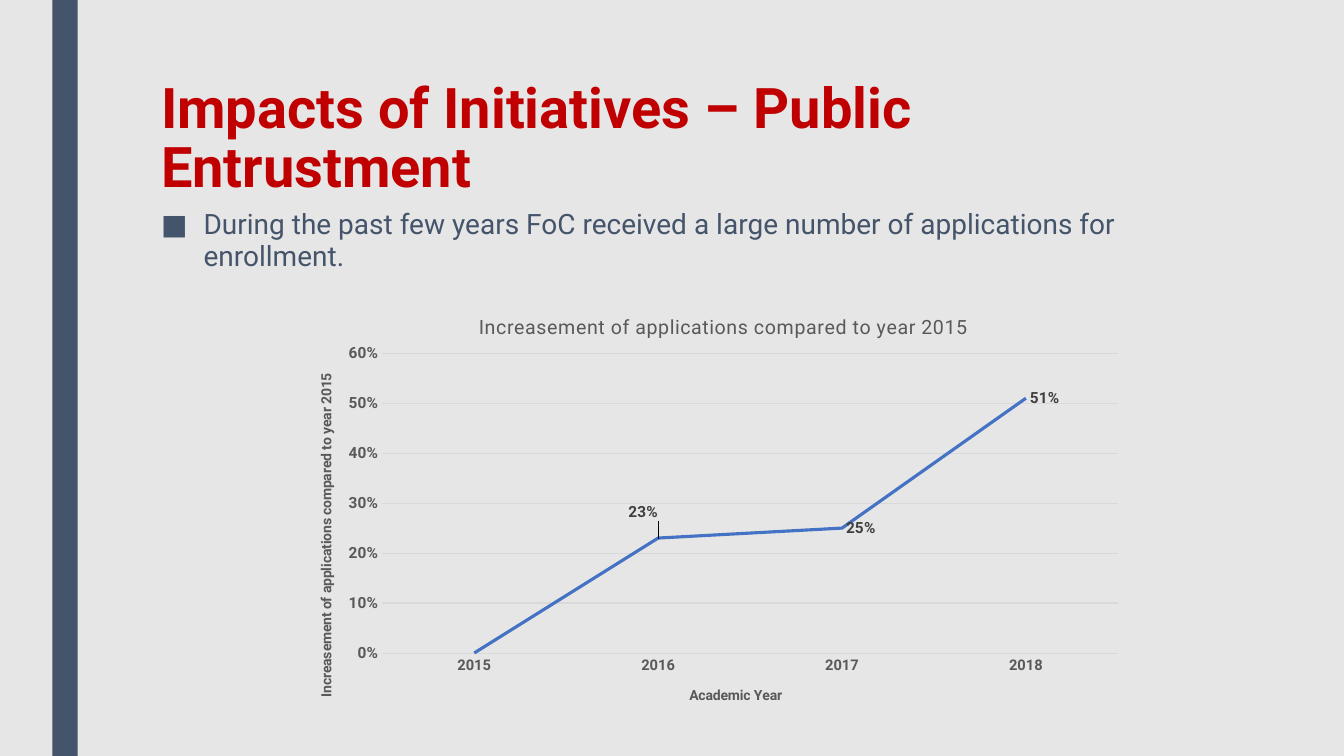
from dataclasses import dataclass

from lxml import etree
from pptx import Presentation
from pptx.chart.data import CategoryChartData
from pptx.dml.color import RGBColor
from pptx.enum.chart import XL_CHART_TYPE, XL_LABEL_POSITION, XL_TICK_MARK
from pptx.enum.shapes import MSO_SHAPE
from pptx.oxml import parse_xml
from pptx.oxml.ns import nsdecls, qn
from pptx.util import Cm, Pt

LINE = XL_CHART_TYPE.LINE
LABEL_RIGHT = XL_LABEL_POSITION.RIGHT
NO_TICK = XL_TICK_MARK.NONE
RECT = MSO_SHAPE.RECTANGLE


@dataclass(frozen=True)
class Theme:
    font: str = "Roboto"
    background: str = "E7E6E6"
    slate: str = "44546A"
    red: str = "C00000"
    blue: str = "4472C4"
    grey: str = "595959"
    label: str = "404040"
    grid: str = "D9D9D9"
    title_size: float = 40
    body_size: float = 20
    chart_title_size: float = 14
    axis_size: float = 11
    category_size: float = 10.5
    axis_title_size: float = 10


@dataclass(frozen=True)
class TextBlock:
    text: str
    top: float
    height: float
    size: float
    color: str
    line_spacing: float
    bold: bool = False
    bullet: str = ""


@dataclass(frozen=True)
class ChartTitle:
    text: str
    size: float
    x: float
    y: float
    bold: bool = True
    spacing: int = 0


THEME = Theme()
GROWTH = "Increasement of applications compared to year 2015"

BLOCKS = [
    TextBlock("Impacts of Initiatives – Public Entrustment", 1.9, 4.11,
              THEME.title_size, THEME.red, 0.89, bold=True),
    TextBlock("During the past few years FoC received a large number of "
              "applications for enrollment.", 5.16, 2.2,
              THEME.body_size, THEME.slate, 0.94, bullet="■"),
]

APPLICATIONS = {"2015": 0, "2016": 0.23, "2017": 0.25, "2018": 0.51}
LABEL_SHIFTS = {1: (-0.04, -0.06), 2: (0, 0), 3: (0, 0)}

CHART_TITLE = ChartTitle(GROWTH, THEME.chart_title_size, 0.22, 0.05,
                         bold=False, spacing=30)
CATEGORY_TITLE = ChartTitle("Academic Year", THEME.axis_title_size, 0.47, 0.91)
VALUE_TITLE = ChartTitle(GROWTH, THEME.axis_title_size, 0.03, 0.19)


def style_font(font, size: float, color: str, bold: bool = False) -> None:
    font.name = THEME.font
    font.size = Pt(size)
    font.bold = bold
    font.color.rgb = RGBColor.from_string(color)


def add_bullet(p, char: str) -> None:
    """Give the paragraph a hanging indent and a bullet character."""
    pPr = p._p.get_or_add_pPr()
    hang = Cm(1.07)
    pPr.set("marL", str(hang))
    pPr.set("indent", str(-hang))
    etree.SubElement(pPr, qn("a:buFont")).set("typeface", THEME.font)
    etree.SubElement(pPr, qn("a:buChar")).set("char", char)


def add_text(s, block: TextBlock) -> None:
    box = s.shapes.add_textbox(Cm(3.81), Cm(block.top), Cm(26.67), Cm(block.height))
    tf = box.text_frame
    tf.word_wrap = True
    p = tf.paragraphs[0]
    p.line_spacing = block.line_spacing
    if block.bullet:
        p.space_before, p.space_after = Pt(10), Pt(2)
        add_bullet(p, block.bullet)
    r = p.add_run()
    r.text = block.text
    style_font(r.font, block.size, block.color, block.bold)


def manual_layout(x: float, y: float, size: tuple[float, float] | None = None,
                  edge: bool = True):
    """Return a c:layout in fractions of the chart; edge False means an offset."""
    tags = []
    if size:
        tags.append('<c:layoutTarget val="inner"/>')
    if edge:
        tags.append('<c:xMode val="edge"/><c:yMode val="edge"/>')
    tags.append(f'<c:x val="{x}"/><c:y val="{y}"/>')
    if size:
        tags.append(f'<c:w val="{size[0]}"/><c:h val="{size[1]}"/>')
    return parse_xml(f'<c:layout {nsdecls("c")}><c:manualLayout>'
                     f'{"".join(tags)}</c:manualLayout></c:layout>')


def set_title(owner, title: ChartTitle) -> None:
    """Title a chart or an axis at a fixed place."""
    heading = owner.chart_title if hasattr(owner, "chart_title") else owner.axis_title
    r = heading.text_frame.paragraphs[0].add_run()
    r.text = title.text
    style_font(r.font, title.size, THEME.grey, title.bold)
    if title.spacing:
        r.font._element.set("spc", str(title.spacing))
    element = heading._element
    for old in element.findall(qn("c:layout")):
        element.remove(old)
    element.find(qn("c:tx")).addnext(manual_layout(title.x, title.y))


def style_axes(chart) -> None:
    categories, values = chart.category_axis, chart.value_axis
    for axis, size in ((categories, THEME.category_size), (values, THEME.axis_size)):
        axis.major_tick_mark = axis.minor_tick_mark = NO_TICK
        style_font(axis.tick_labels.font, size, THEME.grey, bold=True)
    values.minimum_scale, values.maximum_scale, values.major_unit = 0, 0.6, 0.1
    values.tick_labels.number_format = "0%"
    values.tick_labels.number_format_is_linked = False
    values.format.line.fill.background()
    for line in (categories.format.line, values.major_gridlines.format.line):
        line.color.rgb = RGBColor.from_string(THEME.grid)
        line.width = Pt(0.75)


def style_series(series) -> None:
    series.smooth = False
    series.format.line.color.rgb = RGBColor.from_string(THEME.blue)
    series.format.line.width = Pt(2.25)
    for index, (dx, dy) in LABEL_SHIFTS.items():
        label = series.points[index].data_label
        style_font(label.font, THEME.axis_size, THEME.label, bold=True)
        label.position = LABEL_RIGHT
        if dx or dy:
            idx = label._dLbl.find(qn("c:idx"))
            idx.addnext(manual_layout(dx, dy, edge=False))


def add_growth_chart(s) -> None:
    data = CategoryChartData(number_format="0%")
    data.categories = list(APPLICATIONS)
    data.add_series("Series 1", list(APPLICATIONS.values()))
    chart = s.shapes.add_chart(LINE, Cm(7.29), Cm(7.26), Cm(21.31), Cm(10.95),
                               data).chart
    style_font(chart.font, THEME.axis_title_size, THEME.grey)
    chart.has_legend = False
    plot = chart.plots[0]
    plot.vary_by_categories = False
    style_axes(chart)
    style_series(plot.series[0])
    set_title(chart, CHART_TITLE)
    set_title(chart.category_axis, CATEGORY_TITLE)
    set_title(chart.value_axis, VALUE_TITLE)
    area = chart._chartSpace.chart.plotArea
    for old in area.findall(qn("c:layout")):
        area.remove(old)
    area.insert(0, manual_layout(0.11, 0.15, (0.87, 0.69)))


def main() -> None:
    prs = Presentation()
    prs.slide_width, prs.slide_height = Cm(33.87), Cm(19.05)
    s = prs.slides.add_slide(prs.slide_layouts[6])
    s.background.fill.solid()
    s.background.fill.fore_color.rgb = RGBColor.from_string(THEME.background)
    bar = s.shapes.add_shape(RECT, Cm(1.32), 0, Cm(0.64), prs.slide_height)
    bar.shadow.inherit = False
    bar.fill.solid()
    bar.fill.fore_color.rgb = RGBColor.from_string(THEME.slate)
    bar.line.fill.background()
    for block in BLOCKS:
        add_text(s, block)
    add_growth_chart(s)
    prs.save("out.pptx")


if __name__ == "__main__":
    main()
